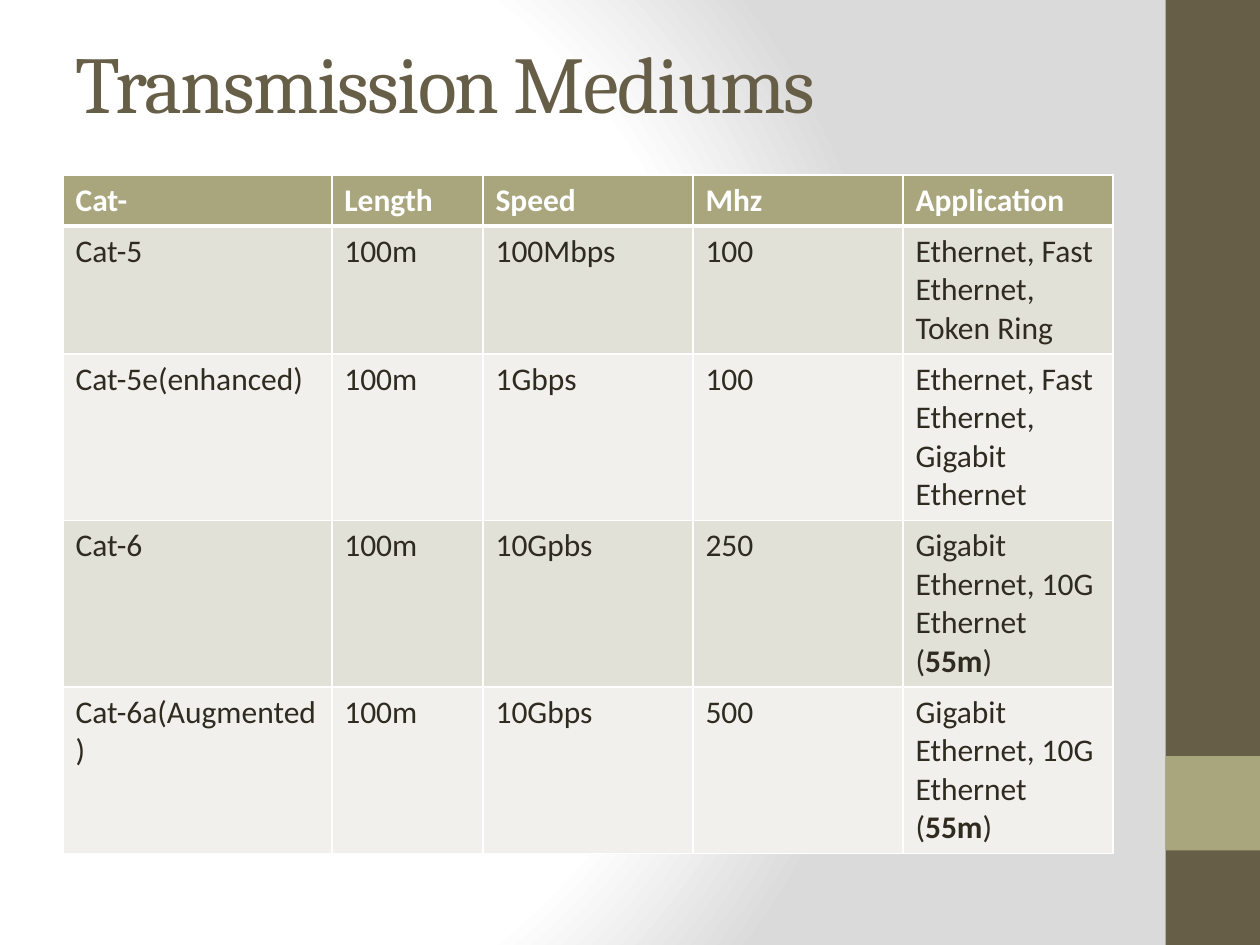
from dataclasses import dataclass

import pptx
import pptx.dml.color
import pptx.enum.shapes
import pptx.enum.text
import pptx.oxml
import pptx.oxml.ns
import pptx.util

Pt = pptx.util.Pt

COLORS = {
    "white": "FFFFFF",
    "shade": "DADADA",
    "brown": "675E47",
    "olive": "A9A57C",
    "ink": "2F2B20",
    "band_dark": "E2E1D7",
    "band_light": "F1F0EC",
}
THIN, THICK = 1, 3
COLUMN_WIDTHS = (153.6, 86.4, 120, 120, 120)
ROW_HEIGHT = 29.2


@dataclass(frozen=True)
class SidePanel:
    top: float
    height: float
    color: str


@dataclass(frozen=True)
class Cable:
    category: str
    length: str
    speed: str
    mhz: str
    application: str
    limit: str = ""


SIDE_PANELS = (SidePanel(0, 540, "brown"), SidePanel(432, 54, "olive"))
HEADINGS = ("Cat-", "Length", "Speed", "Mhz", "Application")
CABLES = (
    Cable("Cat-5", "100m", "100Mbps", "100", "Ethernet, Fast Ethernet, Token Ring"),
    Cable("Cat-5e(enhanced)", "100m", "1Gbps", "100",
          "Ethernet, Fast Ethernet, Gigabit Ethernet"),
    Cable("Cat-6", "100m", "10Gpbs", "250", "Gigabit Ethernet, 10G Ethernet", "55m"),
    Cable("Cat-6a(Augmented)", "100m", "10Gbps", "500",
          "Gigabit Ethernet, 10G Ethernet", "55m"),
)


def rgb(name: str) -> pptx.dml.color.RGBColor:
    return pptx.dml.color.RGBColor.from_string(COLORS[name])


def set_background(slide) -> None:
    """Fill the slide with a circular gradient centred on the left."""
    stops = "".join(
        f'<a:gs pos="{percent * 1000}"><a:srgbClr val="{COLORS[name]}"/></a:gs>'
        for percent, name in ((0, "white"), (75, "white"), (100, "shade"))
    )
    background = pptx.oxml.parse_xml(
        f'<p:bg {pptx.oxml.ns.nsdecls("p", "a")}><p:bgPr><a:gradFill rotWithShape="1">'
        f'<a:gsLst>{stops}</a:gsLst><a:path path="circle">'
        '<a:fillToRect l="20000" t="50000" r="100000" b="50000"/></a:path>'
        '</a:gradFill><a:effectLst/></p:bgPr></p:bg>'
    )
    slide.element.cSld.insert(0, background)


def add_side_panel(slide, panel: SidePanel) -> None:
    strip = slide.shapes.add_shape(
        pptx.enum.shapes.MSO_SHAPE.RECTANGLE,
        Pt(666), Pt(panel.top), Pt(54), Pt(panel.height),
    )
    strip.shadow.inherit = False
    strip.fill.solid()
    strip.fill.fore_color.rgb = rgb(panel.color)
    strip.line.fill.background()


def add_run(paragraph, text: str, size: float, font: str, color: str, bold: bool = False):
    run = paragraph.add_run()
    run.text = text
    run.font.size = Pt(size)
    run.font.name = font
    run.font.bold = bold
    run.font.color.rgb = rgb(color)
    return run


def set_title(slide, text: str) -> None:
    title = slide.shapes.title
    title.left, title.top, title.width, title.height = Pt(36), Pt(21.6), Pt(600), Pt(49.7)
    frame = title.text_frame
    frame.auto_size = pptx.enum.text.MSO_AUTO_SIZE.NONE
    frame.vertical_anchor = pptx.enum.text.MSO_ANCHOR.MIDDLE
    paragraph = frame.paragraphs[0]
    paragraph.alignment = pptx.enum.text.PP_ALIGN.LEFT
    run = add_run(paragraph, text, 46, "Cambria", "brown")
    run.font._element.set("spc", "-100")


def style_cell(cell, fill: str, top: float, bottom: float) -> None:
    cell.fill.solid()
    cell.fill.fore_color.rgb = rgb(fill)
    borders = (("lnL", THIN), ("lnR", THIN), ("lnT", top), ("lnB", bottom))
    for position, (side, width) in enumerate(borders):
        border = pptx.oxml.parse_xml(
            f'<a:{side} {pptx.oxml.ns.nsdecls("a")} w="{Pt(width)}"><a:solidFill>'
            f'<a:srgbClr val="{COLORS["white"]}"/></a:solidFill></a:{side}>'
        )
        cell._tc.get_or_add_tcPr().insert(position, border)


def add_cable_table(slide) -> None:
    row_count = len(CABLES) + 1
    table = slide.shapes.add_table(
        row_count, len(HEADINGS), Pt(36), Pt(100),
        Pt(sum(COLUMN_WIDTHS)), Pt(ROW_HEIGHT * row_count),
    ).table
    table.horz_banding = False
    for column, width in zip(table.columns, COLUMN_WIDTHS):
        column.width = Pt(width)
    for row in table.rows:
        row.height = Pt(ROW_HEIGHT)

    for cell, heading in zip(table.rows[0].cells, HEADINGS):
        style_cell(cell, "olive", THIN, THICK)
        add_run(cell.text_frame.paragraphs[0], heading, 18, "Calibri", "white", True)

    for index, cable in enumerate(CABLES, start=1):
        application = [(cable.application, False)]
        if cable.limit:
            application = [(cable.application + " (", False), (cable.limit, True), (")", False)]
        plain = (cable.category, cable.length, cable.speed, cable.mhz)
        contents = [[(text, False)] for text in plain] + [application]
        fill = "band_dark" if index % 2 else "band_light"
        for cell, pieces in zip(table.rows[index].cells, contents):
            style_cell(cell, fill, THICK if index == 1 else THIN, THIN)
            for text, bold in pieces:
                add_run(cell.text_frame.paragraphs[0], text, 18, "Calibri", "ink", bold)


def main() -> None:
    deck = pptx.Presentation()
    deck.slide_width, deck.slide_height = Pt(720), Pt(540)
    slide = deck.slides.add_slide(deck.slide_layouts.get_by_name("Title Only"))
    set_background(slide)
    for panel in SIDE_PANELS:
        add_side_panel(slide, panel)
    set_title(slide, "Transmission Mediums")
    add_cable_table(slide)
    deck.save("out.pptx")


if __name__ == "__main__":
    main()
